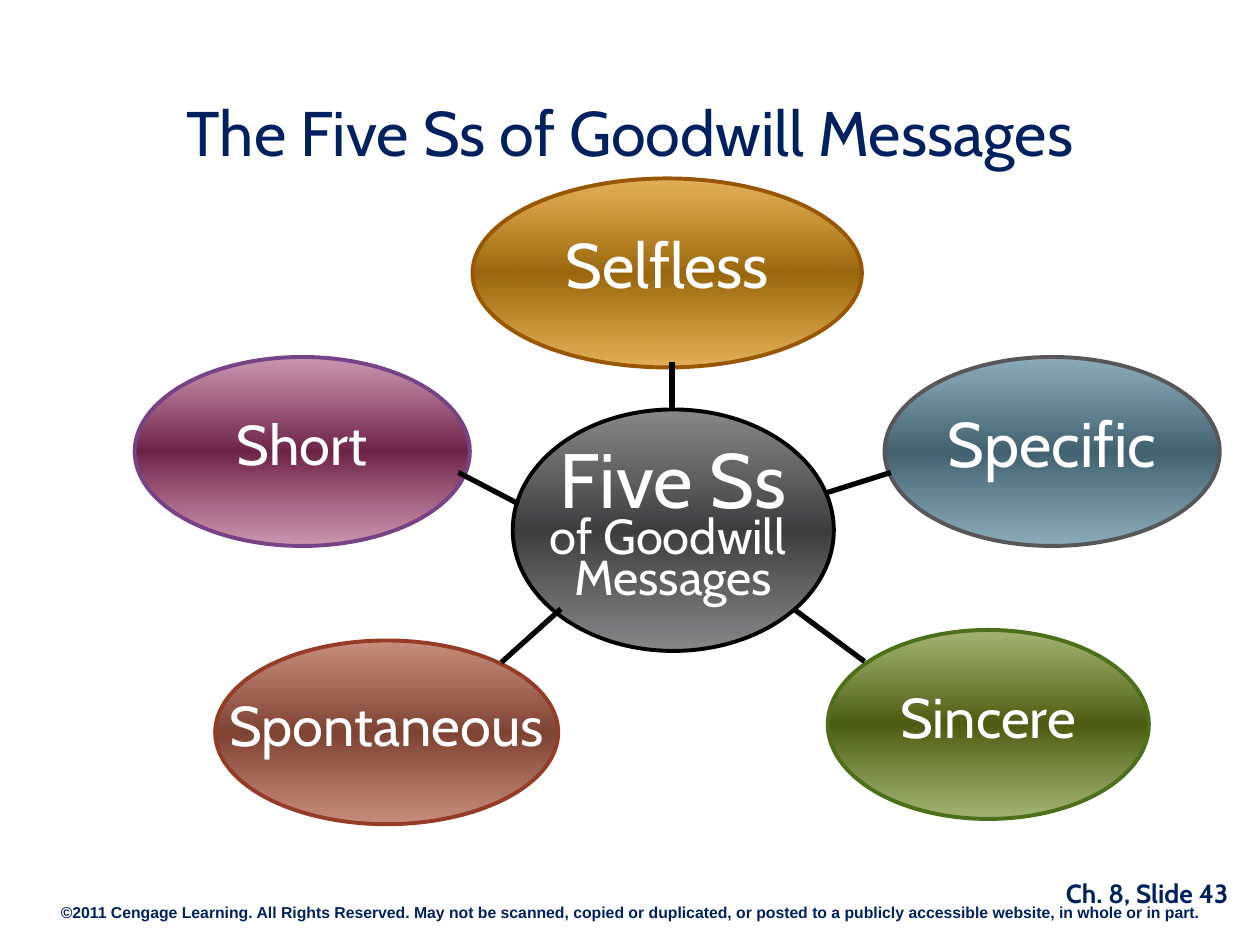
from dataclasses import dataclass

from lxml.etree import SubElement
from pptx import Presentation
from pptx.dml.color import RGBColor
from pptx.enum.shapes import MSO_CONNECTOR as Connector, MSO_SHAPE as Shape
from pptx.enum.text import MSO_ANCHOR as Anchor, PP_ALIGN as Align
from pptx.oxml.ns import qn
from pptx.util import Pt


@dataclass(frozen=True)
class Theme:
    """Colours, fonts and type sizes of the slide."""

    heading_font: str = "Cabin"
    footer_font: str = "Arial"
    navy: str = "002060"
    white: str = "FFFFFF"
    black: str = "000000"
    title_size: float = 36
    hub_sizes: tuple = (44, 28, 28)
    large_label: float = 36
    label: float = 32
    number_size: float = 15
    copyright_size: float = 9
    outline: float = 2.25
    spoke: float = 3
    middle_shade: int = 46275


class SlideBuilder:
    """Holds the theme and the current slide and adds elements to it."""

    def __init__(self, slide, theme):
        """Keep the slide and the theme."""
        self.slide = slide
        self.theme = theme

    def set_text(self, text_frame, text, sizes, color, spacing, font, bold=False):
        """Fill a text frame with one centred paragraph, one size per run."""
        text_frame.text = text
        paragraph = text_frame.paragraphs[0]
        paragraph.alignment = Align.CENTER
        paragraph.line_spacing = spacing
        for run, size in zip(paragraph.runs, sizes):
            run.font.name = font
            run.font.size = Pt(size)
            run.font.bold = bold
            run.font.color.rgb = RGBColor.from_string(color)

    def title(self, text, box):
        """Place and format the title placeholder."""
        shape = self.slide.shapes.title
        shape.left, shape.top, shape.width, shape.height = map(Pt, box)
        shape.text_frame.vertical_anchor = Anchor.MIDDLE
        theme = self.theme
        self.set_text(shape.text_frame, text, [theme.title_size], theme.navy, 0.9,
                      theme.heading_font)

    def footer(self, text, box, size, font):
        """Add a bold line of footer text."""
        text_frame = self.slide.shapes.add_textbox(*map(Pt, box)).text_frame
        text_frame.word_wrap = True
        self.set_text(text_frame, text, [size], self.theme.navy, 0.6, font, True)

    def gradient(self, shape, color, opacity):
        """Fill a shape from translucent edges to a dark middle band."""
        shape.fill.gradient()
        shape.fill.gradient_angle = 270
        stops = shape._element.spPr.find(qn("a:gradFill")).find(qn("a:gsLst"))
        for stop in list(stops):
            stops.remove(stop)
        edge = ("a:alpha", opacity * 1000)
        middle = ("a:shade", self.theme.middle_shade)
        for position, (tag, value) in zip((0, 50, 100), (edge, middle, edge)):
            stop = SubElement(stops, qn("a:gs"), pos=str(position * 1000))
            stop_color = SubElement(stop, qn("a:srgbClr"), val=color)
            SubElement(stop_color, qn(tag), val=str(value))

    def ellipse(self, text, box, color, opacity, outline, sizes):
        """Add a labelled ellipse with a banded gradient."""
        theme = self.theme
        shape = self.slide.shapes.add_shape(Shape.OVAL, *map(Pt, box))
        shape.shadow.inherit = False
        self.gradient(shape, color, opacity)
        shape.line.color.rgb = RGBColor.from_string(outline)
        shape.line.width = Pt(theme.outline)
        text_frame = shape.text_frame
        text_frame.word_wrap = False
        text_frame.vertical_anchor = Anchor.MIDDLE
        text_frame.margin_left = text_frame.margin_right = 0
        text_frame.margin_top = text_frame.margin_bottom = 0
        self.set_text(text_frame, text, sizes, theme.white, 0.7, theme.heading_font)

    def spoke(self, ends):
        """Add a straight line from the hub to an outer ellipse."""
        connector = self.slide.shapes.add_connector(Connector.STRAIGHT, *map(Pt, ends))
        connector.line.color.rgb = RGBColor.from_string(self.theme.black)
        connector.line.width = Pt(self.theme.spoke)
        SubElement(connector._element.spPr, qn("a:effectLst"))


def main():
    """Build and save the slide."""
    theme = Theme()
    presentation = Presentation()
    presentation.slide_width, presentation.slide_height = Pt(720), Pt(540)
    slide = presentation.slides.add_slide(presentation.slide_layouts[5])
    builder = SlideBuilder(slide, theme)

    builder.footer(
        "©2011 Cengage Learning. All Rights Reserved. May not be scanned, copied or "
        "duplicated, or posted to a publicly accessible website, in whole or in part.",
        (0, 516, 720, 14.4), theme.copyright_size, theme.footer_font)
    builder.footer("Ch. 8, Slide 43", (589.5, 504, 132, 24), theme.number_size,
                   theme.heading_font)
    builder.title("The Five Ss of Goodwill Messages", (18, 42, 684, 72))
    builder.ellipse("Five Ss\vof Goodwill \vMessages", (293, 234, 183.5, 138),
                    "57575A", 70, theme.black, theme.hub_sizes)

    nodes = [
        ("Short", (77, 204, 191.5, 108), "993366", 50, "774286", theme.label,
         (296.5, 288, 262, 270)),
        ("Spontaneous", (123, 366, 196, 105), "B15F48", 70, "963C26", theme.label,
         (320.5, 348, 286.5, 378.5)),
        ("Sincere", (473, 360, 183.5, 108), "6A831B", 60, "4C7019", theme.label,
         (453.5, 348, 494, 378)),
        ("Specific", (505.5, 204, 191.5, 108), "5D8A9E", 70, "57575A",
         theme.large_label, (471, 282, 509, 270)),
        ("Selfless", (270, 102, 222.5, 108), "D89013", 70, "995604",
         theme.large_label, (384, 234, 384, 207)),
    ]
    for text, box, color, opacity, outline, size, ends in nodes:
        builder.ellipse(text, box, color, opacity, outline, [size])
        builder.spoke(ends)

    presentation.save("out.pptx")


if __name__ == "__main__":
    main()
